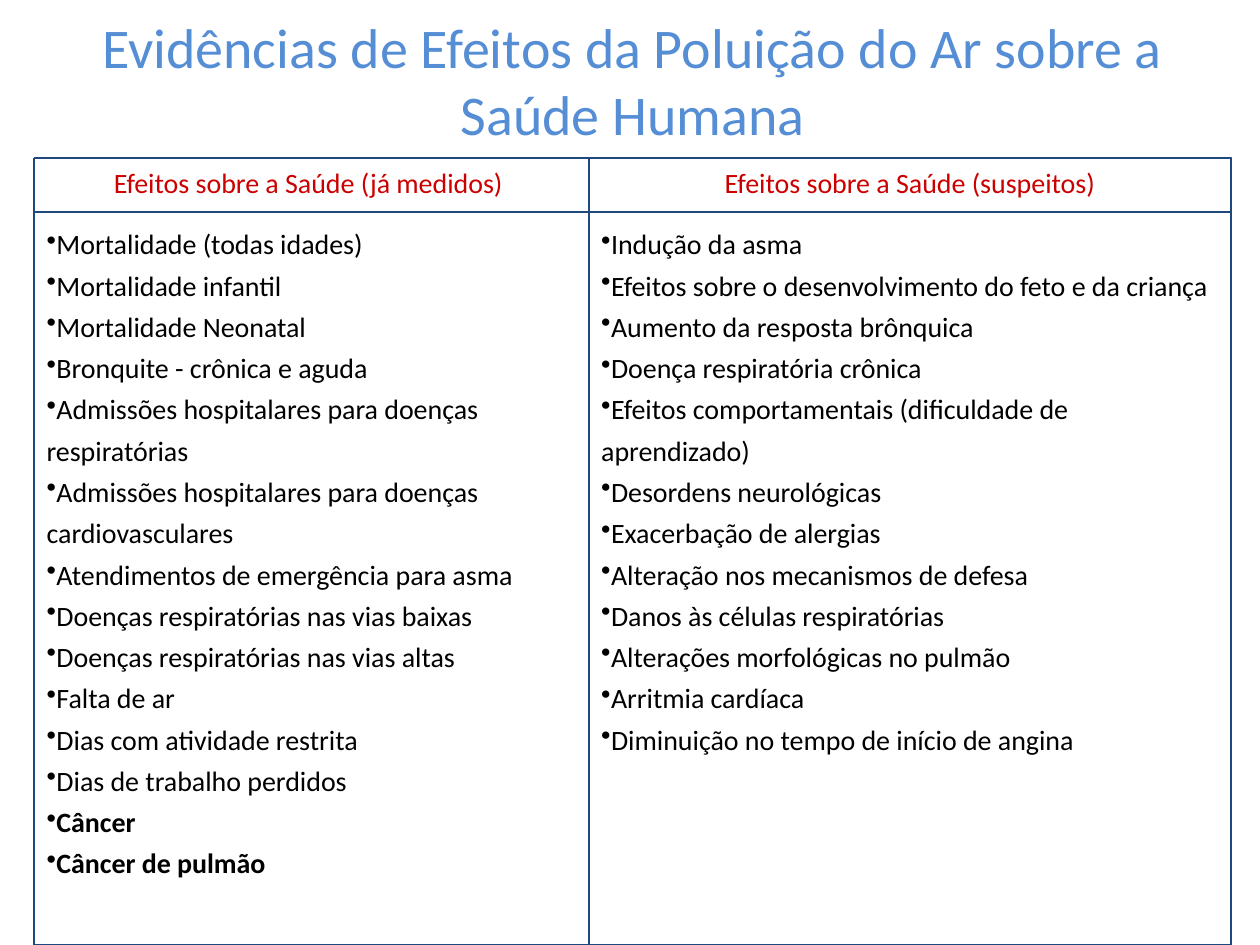
from dataclasses import dataclass

from pptx import Presentation
from pptx.dml.color import RGBColor
from pptx.enum.shapes import MSO_CONNECTOR, MSO_SHAPE
from pptx.enum.text import MSO_ANCHOR, MSO_AUTO_SIZE, PP_ALIGN
from pptx.oxml import parse_xml
from pptx.oxml.ns import nsdecls
from pptx.util import Cm, Pt


@dataclass(frozen=True)
class Theme:
    font: str = "Calibri"
    title_color: str = "558ED5"
    header_color: str = "CC0000"
    body_color: str = "000000"
    border_color: str = "1F497D"
    title_size: int = 32
    panel_size: int = 16
    panel_border: float = 0.75
    rule_width: float = 1
    body_spacing: float = 1.23


THEME = Theme()

TITLE = "Evidências de Efeitos da Poluição do Ar sobre a Saúde Humana"
MEASURED = [
    "Mortalidade (todas idades)",
    "Mortalidade infantil",
    "Mortalidade Neonatal",
    "Bronquite - crônica e aguda",
    "Admissões hospitalares para doenças respiratórias",
    "Admissões hospitalares para doenças cardiovasculares",
    "Atendimentos de emergência para asma",
    "Doenças respiratórias nas vias baixas",
    "Doenças respiratórias nas vias altas",
    "Falta de ar",
    "Dias com atividade restrita",
    "Dias de trabalho perdidos",
    "Câncer",
    "Câncer de pulmão",
]
SUSPECTED = [
    "Indução da asma",
    "Efeitos sobre o desenvolvimento do feto e da criança",
    "Aumento da resposta brônquica",
    "Doença respiratória crônica",
    "Efeitos comportamentais (dificuldade de aprendizado)",
    "Desordens neurológicas",
    "Exacerbação de alergias",
    "Alteração nos mecanismos de defesa",
    "Danos às células respiratórias",
    "Alterações morfológicas no pulmão",
    "Arritmia cardíaca",
    "Diminuição no tempo de início de angina",
]
HIGHLIGHTED = {"Câncer", "Câncer de pulmão"}
HEADER_HEIGHT = Cm(1.09)
MEASURED_WIDTH = Cm(11.18)


def format_runs(para, size, color, bold=False):
    for span in para.runs:
        span.font.name = THEME.font
        span.font.size = Pt(size)
        span.font.bold = bold
        span.font.color.rgb = RGBColor.from_string(color)


def add_bullet(para):
    properties = para._p.get_or_add_pPr()
    properties.set("marL", "0")
    properties.set("indent", "0")
    properties.append(parse_xml(f'<a:buFontTx {nsdecls("a")}/>'))
    properties.append(parse_xml(f'<a:buChar {nsdecls("a")} char="•"/>'))


def set_line(shape, width):
    shape.line.color.rgb = RGBColor.from_string(THEME.border_color)
    shape.line.width = Pt(width)


def add_panel(page, text, left, top, width, height):
    """Add an outlined rectangle with text at its top and return its paragraphs."""
    panel = page.shapes.add_shape(MSO_SHAPE.RECTANGLE, left, top, width, height)
    panel.shadow.inherit = False
    panel.fill.background()
    set_line(panel, THEME.panel_border)
    frame = panel.text_frame
    frame.text = text
    frame.word_wrap = True
    frame.vertical_anchor = MSO_ANCHOR.TOP
    frame.margin_top = Cm(0.15)
    return frame.paragraphs


def add_rule(page, x1, y1, x2, y2):
    rule = page.shapes.add_connector(MSO_CONNECTOR.STRAIGHT, x1, y1, x2, y2)
    rule._element.spPr.append(parse_xml(f'<a:effectLst {nsdecls("a")}/>'))
    set_line(rule, THEME.rule_width)


def place_title(page, left, top, width, height):
    title = page.shapes.title
    title.left, title.top, title.width, title.height = left, top, width, height
    frame = title.text_frame
    frame.text = TITLE
    frame.word_wrap = True
    frame.auto_size = MSO_AUTO_SIZE.NONE
    frame.vertical_anchor = MSO_ANCHOR.TOP
    para = frame.paragraphs[0]
    para.alignment = PP_ALIGN.CENTER
    para.space_before = Pt(0)
    format_runs(para, THEME.title_size, THEME.title_color)


def place_column(page, heading, effects, left, top, width, height):
    header = add_panel(page, heading, left, top, width, HEADER_HEIGHT)[0]
    header.alignment = PP_ALIGN.CENTER
    format_runs(header, THEME.panel_size, THEME.header_color)
    for para in add_panel(page, "\n".join(effects), left, top + HEADER_HEIGHT,
                          width, height - HEADER_HEIGHT):
        para.alignment = PP_ALIGN.LEFT
        add_bullet(para)
        para.line_spacing = THEME.body_spacing
        format_runs(para, THEME.panel_size, THEME.body_color, para.text in HIGHLIGHTED)


def place_effects(page, left, top, width, height):
    """Place both columns of effects and the rules around them."""
    middle, right, bottom = left + MEASURED_WIDTH, left + width, top + height
    place_column(page, "Efeitos sobre a Saúde (suspeitos)", SUSPECTED,
                 middle, top, right - middle, height)
    place_column(page, "Efeitos sobre a Saúde (já medidos) ", MEASURED,
                 left, top, MEASURED_WIDTH, height)
    for y in (top, top + HEADER_HEIGHT):
        add_rule(page, left, y, right, y)
    for x in (left, middle, right):
        add_rule(page, x, top, x, bottom)


def main():
    deck = Presentation()
    deck.slide_width, deck.slide_height = Cm(25.4), Cm(19.05)
    page = deck.slides.add_slide(deck.slide_layouts[5])
    left, width, effects_top = Cm(0.69), Cm(24.13), Cm(3.18)
    place_title(page, left, Cm(0.13), width, Cm(3))
    place_effects(page, left, effects_top, width, deck.slide_height - effects_top)
    deck.save("out.pptx")


if __name__ == "__main__":
    main()
